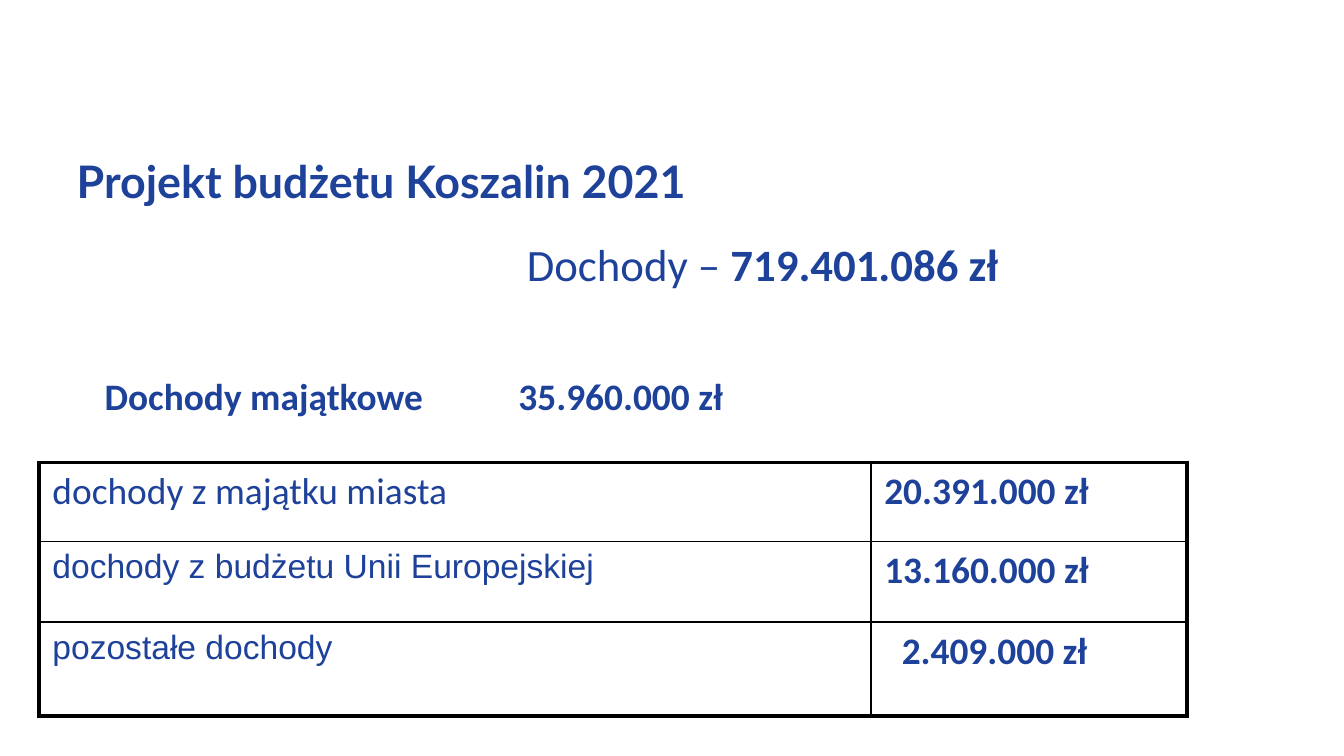
from dataclasses import dataclass

from lxml.etree import SubElement
from pptx import Presentation
from pptx.dml.color import RGBColor
from pptx.enum.text import MSO_ANCHOR as Anchor, MSO_AUTO_SIZE as AutoSize, PP_ALIGN as Align
from pptx.oxml.ns import qn
from pptx.util import Inches, Pt


@dataclass(frozen=True)
class Theme:
    blue: str = "1E429A"
    black: str = "000000"
    heading: int = 24
    body: int = 20
    small: int = 18
    outer_line: float = 2.25
    inner_line: float = 1


THEME = Theme()
ROWS = [
    ("dochody z majątku miasta", "20.391.000 zł"),
    ("dochody z budżetu Unii Europejskiej", "13.160.000 zł"),
    ("pozostałe dochody", "2.409.000 zł"),
]
COLUMN_WIDTHS = [6.19, 2.35]
ROW_HEIGHTS = [0.59, 0.6, 0.7]


def add_text(para, text, size=THEME.body, font="Calibri", bold=False):
    span = para.add_run()
    span.text = text
    span.font.size = Pt(size)
    span.font.name = font
    span.font.bold = bold
    span.font.color.rgb = RGBColor.from_string(THEME.blue)


def prepare_frame(box, align=Align.LEFT):
    frame = box.text_frame
    frame.word_wrap = True
    frame.auto_size = AutoSize.NONE
    frame.vertical_anchor = Anchor.TOP
    para = frame.paragraphs[0]
    para.alignment = align
    para.space_before = Pt(0)
    para.line_spacing = 1.0
    return para


def add_title(slide, text):
    title = slide.shapes.title
    title.left, title.top = Inches(0.47), Inches(1.09)
    title.width, title.height = Inches(8.36), Inches(0.5)
    add_text(prepare_frame(title), text, size=THEME.heading, font="Lato", bold=True)


def add_box(slide, left, top, width, height, align=Align.LEFT):
    box = slide.shapes.add_textbox(Inches(left), Inches(top), Inches(width), Inches(height))
    return prepare_frame(box, align)


def add_tab(para, position):
    tabs = SubElement(para._p.get_or_add_pPr(), qn("a:tabLst"))
    SubElement(tabs, qn("a:tab"), pos=str(Inches(position)), algn="l")


def set_borders(cell, outer_sides):
    properties = cell._tc.get_or_add_tcPr()
    for side in "LRTB":
        width = THEME.outer_line if side in outer_sides else THEME.inner_line
        line = SubElement(properties, qn(f"a:ln{side}"), w=str(Pt(width)))
        fill = SubElement(line, qn("a:solidFill"))
        SubElement(fill, qn("a:srgbClr"), val=THEME.black)


def add_income_table(slide):
    frame = slide.shapes.add_table(
        len(ROWS), len(COLUMN_WIDTHS), Inches(0.29), Inches(3.44),
        Inches(sum(COLUMN_WIDTHS)), Inches(sum(ROW_HEIGHTS)))
    table = frame.table
    table.first_row = table.horz_banding = False
    for column, width in zip(table.columns, COLUMN_WIDTHS):
        column.width = Inches(width)

    for index, (label, amount) in enumerate(ROWS):
        table.rows[index].height = Inches(ROW_HEIGHTS[index])
        rim = ("T" if index == 0 else "") + ("B" if index == len(ROWS) - 1 else "")
        name_cell, amount_cell = table.cell(index, 0), table.cell(index, 1)
        for cell, side in ((name_cell, "L"), (amount_cell, "R")):
            set_borders(cell, rim + side)
            cell.fill.background()
        # The first label is larger than the ones below it
        label_format = {} if index == 0 else {"size": THEME.small, "font": "Arial"}
        add_text(name_cell.text_frame.paragraphs[0], label, **label_format)
        add_text(amount_cell.text_frame.paragraphs[0], amount, bold=True)

    # The shorter amount is indented to line up with the others
    table.cell(len(ROWS) - 1, 1).margin_left = Inches(0.23)


def main():
    # Widescreen slide, 16:9
    deck = Presentation()
    deck.slide_width = Inches(10)
    deck.slide_height = Inches(10 * 9 / 16)
    slide = deck.slides.add_slide(deck.slide_layouts[5])

    # Heading and total income
    add_title(slide, "Projekt budżetu Koszalin 2021")
    total = add_box(slide, 1.46, 1.71, 8.43, 0.51, align=Align.CENTER)
    add_text(total, "Dochody – ", size=THEME.heading)
    add_text(total, "719.401.086 zł", size=THEME.heading, bold=True)

    # Capital income and its parts
    capital = add_box(slide, 0.68, 2.73, 5.5, 0.44)
    add_tab(capital, 3.08)
    add_text(capital, "Dochody majątkowe\t35.960.000 zł", bold=True)
    add_income_table(slide)

    deck.save("out.pptx")


if __name__ == "__main__":
    main()
